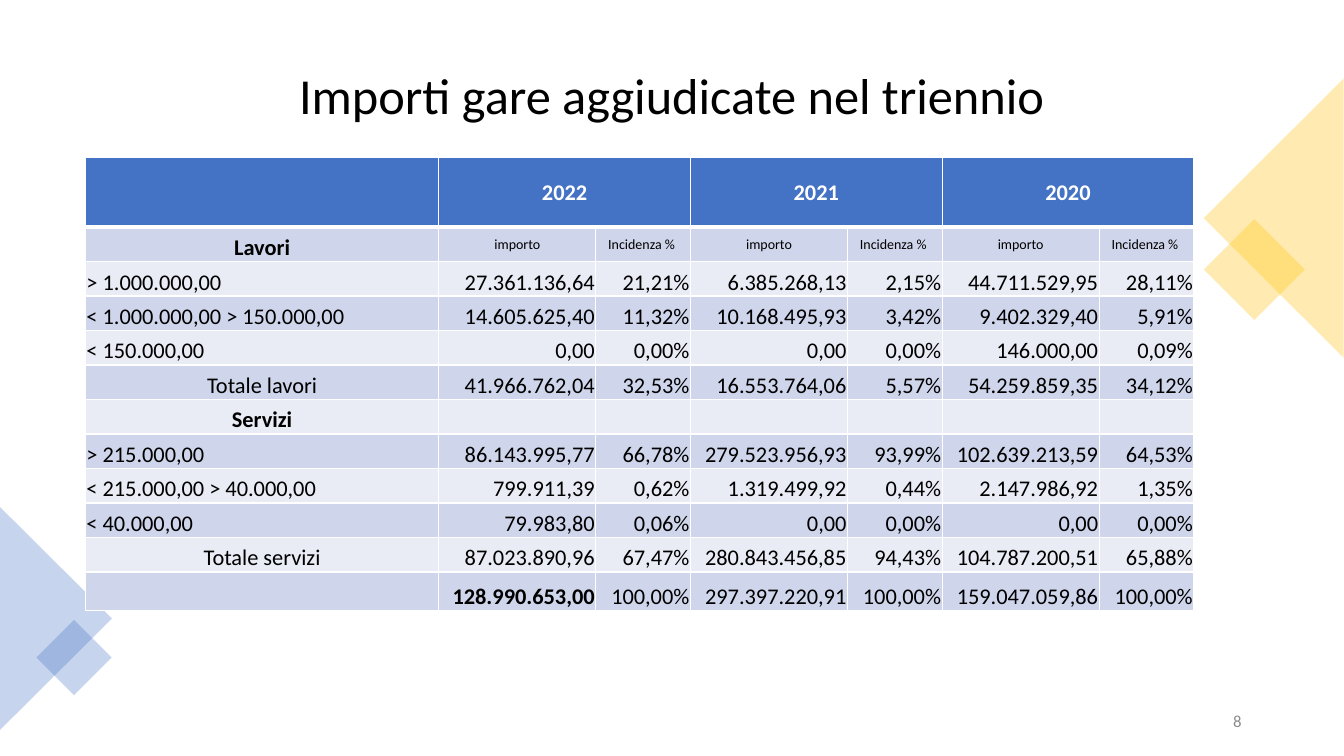
from lxml import etree
from pptx import Presentation
from pptx import util as u
from pptx.dml import color
from pptx.enum import shapes, text
from pptx.oxml import ns

COLORS = {"black": "000000", "white": "FFFFFF", "grey": "8C8C8C", "blue": "4472C4",
          "gold": "FFC000", "band_dark": "CFD5EA", "band_light": "E9EBF5"}
LEFT, CENTER, RIGHT = text.PP_ALIGN.LEFT, text.PP_ALIGN.CENTER, text.PP_ALIGN.RIGHT
MIDDLE, BOTTOM = text.MSO_ANCHOR.MIDDLE, text.MSO_ANCHOR.BOTTOM

YEARS = ["2022", "2021", "2020"]
SUBHEADS = ["importo", "Incidenza % "]
ROWS = [
    ["Lavori"] + SUBHEADS * len(YEARS),
    ["> 1.000.000,00", "27.361.136,64", "21,21%", "6.385.268,13", "2,15%", "44.711.529,95", "28,11%"],
    ["< 1.000.000,00 > 150.000,00", "14.605.625,40", "11,32%", "10.168.495,93", "3,42%",
     "9.402.329,40", "5,91%"],
    ["< 150.000,00", "0,00", "0,00%", "0,00", "0,00%", "146.000,00", "0,09%"],
    ["Totale lavori", "41.966.762,04", "32,53%", "16.553.764,06", "5,57%", "54.259.859,35", "34,12%"],
    ["Servizi"] + [""] * 6,
    ["> 215.000,00", "86.143.995,77", "66,78%", "279.523.956,93", "93,99%", "102.639.213,59", "64,53%"],
    ["< 215.000,00 > 40.000,00", "799.911,39", "0,62%", "1.319.499,92", "0,44%", "2.147.986,92", "1,35%"],
    ["< 40.000,00", "79.983,80", "0,06%", "0,00", "0,00%", "0,00", "0,00%"],
    ["Totale servizi", "87.023.890,96", "67,47%", "280.843.456,85", "94,43%", "104.787.200,51", "65,88%"],
    ["", "128.990.653,00", "100,00%", "297.397.220,91", "100,00%", "159.047.059,86", "100,00%"],
]
BOLD = {"Lavori", "Servizi", "128.990.653,00"}


class SlideBuilder:
    def __init__(self, presentation, font="Calibri"):
        self.font = font
        self.slide = presentation.slides.add_slide(presentation.slide_layouts[5])

    def color(self, name):
        return color.RGBColor.from_string(COLORS[name])

    def add_words(self, frame, words, size, ink, align, bold=False):
        paragraph = frame.paragraphs[0]
        paragraph.alignment = align
        run = paragraph.add_run()
        run.text = words
        run.font.name = self.font
        run.font.size = u.Pt(size)
        run.font.bold = bold
        run.font.color.rgb = self.color(ink)
        return paragraph

    def title(self, words, box):
        title = self.slide.shapes.title
        title.left, title.top, title.width, title.height = map(u.Pt, box)
        title.text_frame.vertical_anchor = MIDDLE
        self.add_words(title.text_frame, words, 36, "black", CENTER).line_spacing = 0.9

    def textbox(self, words, box, size, ink, align):
        frame = self.slide.shapes.add_textbox(*map(u.Pt, box)).text_frame
        frame.word_wrap = True
        frame.vertical_anchor = MIDDLE
        self.add_words(frame, words, size, ink, align)

    def ornament(self, kind, box, rotation, fill, opacity=30):
        shape = self.slide.shapes.add_shape(kind, *map(u.Pt, box))
        shape.rotation = rotation
        shape.shadow.inherit = False
        shape.line.fill.background()
        shape.fill.solid()
        shape.fill.fore_color.rgb = self.color(fill)
        tint = shape._element.spPr.find(ns.qn("a:solidFill")).find(ns.qn("a:srgbClr"))
        etree.SubElement(tint, ns.qn("a:alpha"), val=str(opacity * 1000))

    def table(self, box, widths, heights):
        table = self.slide.shapes.add_table(len(heights), len(widths), *map(u.Pt, box)).table
        table.horz_banding = False
        for column, width in zip(table.columns, widths):
            column.width = u.Pt(width)
        for row, height in zip(table.rows, heights):
            row.height = u.Pt(height)
        return table

    def cell(self, cell, words, fill, size=16, ink="black", align=RIGHT, anchor=BOTTOM,
             bold=False, top=1, bottom=1):
        cell.margin_left = cell.margin_right = cell.margin_top = u.Pt(0.75)
        cell.margin_bottom = 0
        cell.vertical_anchor = anchor
        for side, width in zip("LRTB", (1, 1, top, bottom)):
            line = etree.SubElement(cell._tc.get_or_add_tcPr(), ns.qn("a:ln" + side),
                                    w=str(int(u.Pt(width))))
            solid = etree.SubElement(line, ns.qn("a:solidFill"))
            etree.SubElement(solid, ns.qn("a:srgbClr"), val=COLORS["white"])
        cell.fill.solid()
        cell.fill.fore_color.rgb = self.color(fill)
        self.add_words(cell.text_frame, words, size, ink, align, bold)


def fill_table(builder, table):
    # Year header, each year over two columns
    header = [""] + [words for year in YEARS for words in (year, "")]
    for c, words in enumerate(header):
        builder.cell(table.cell(0, c), words, "blue", ink="white", align=CENTER,
                     anchor=MIDDLE, bold=True, bottom=3)
    for c in range(1, len(header), 2):
        table.cell(0, c).merge(table.cell(0, c + 1))

    # Body: thresholds left, headings and totals centred, figures right
    for r, row in enumerate(ROWS, start=1):
        fill = "band_dark" if r % 2 else "band_light"
        for c, words in enumerate(row):
            style = {"bold": words in BOLD, "top": 3 if r == 1 else 1}
            if c == 0:
                style["align"] = LEFT if words[:1] in ("<", ">") else CENTER
            elif words in SUBHEADS:
                style.update(size=10, align=CENTER, anchor=MIDDLE)
            builder.cell(table.cell(r, c), words, fill, **style)


def main():
    presentation = Presentation()
    presentation.slide_width, presentation.slide_height = u.Pt(960), u.Pt(540)
    builder = SlideBuilder(presentation)

    # Title
    builder.title("Importi gare aggiudicate nel triennio", (50.4, 25.2, 859, 89.3))

    # Corner ornaments
    square, triangle = shapes.MSO_SHAPE.RECTANGLE, shapes.MSO_SHAPE.ISOSCELES_TRIANGLE
    builder.ornament(square, (870.5, 167, 51, 51), 45, "gold")
    builder.ornament(triangle, (810, 105.8, 199.6, 100), 270, "gold")
    builder.ornament(triangle, (-39.6, 401.8, 159.2, 80), 90, "blue")
    builder.ornament(square, (33.8, 450.7, 38, 38), 45, "blue")

    # Table of amounts
    widths = [252.4] + [112.2, 67.6] * len(YEARS)
    heights = [49.7] + [24.64] * 10 + [27.4]
    table = builder.table((61, 112.5, sum(widths), sum(heights)), widths, heights)
    fill_table(builder, table)

    # Slide number
    builder.textbox("8", (678, 500.5, 216, 28.8), 12, "grey", RIGHT)

    presentation.save("out.pptx")


if __name__ == "__main__":
    main()
